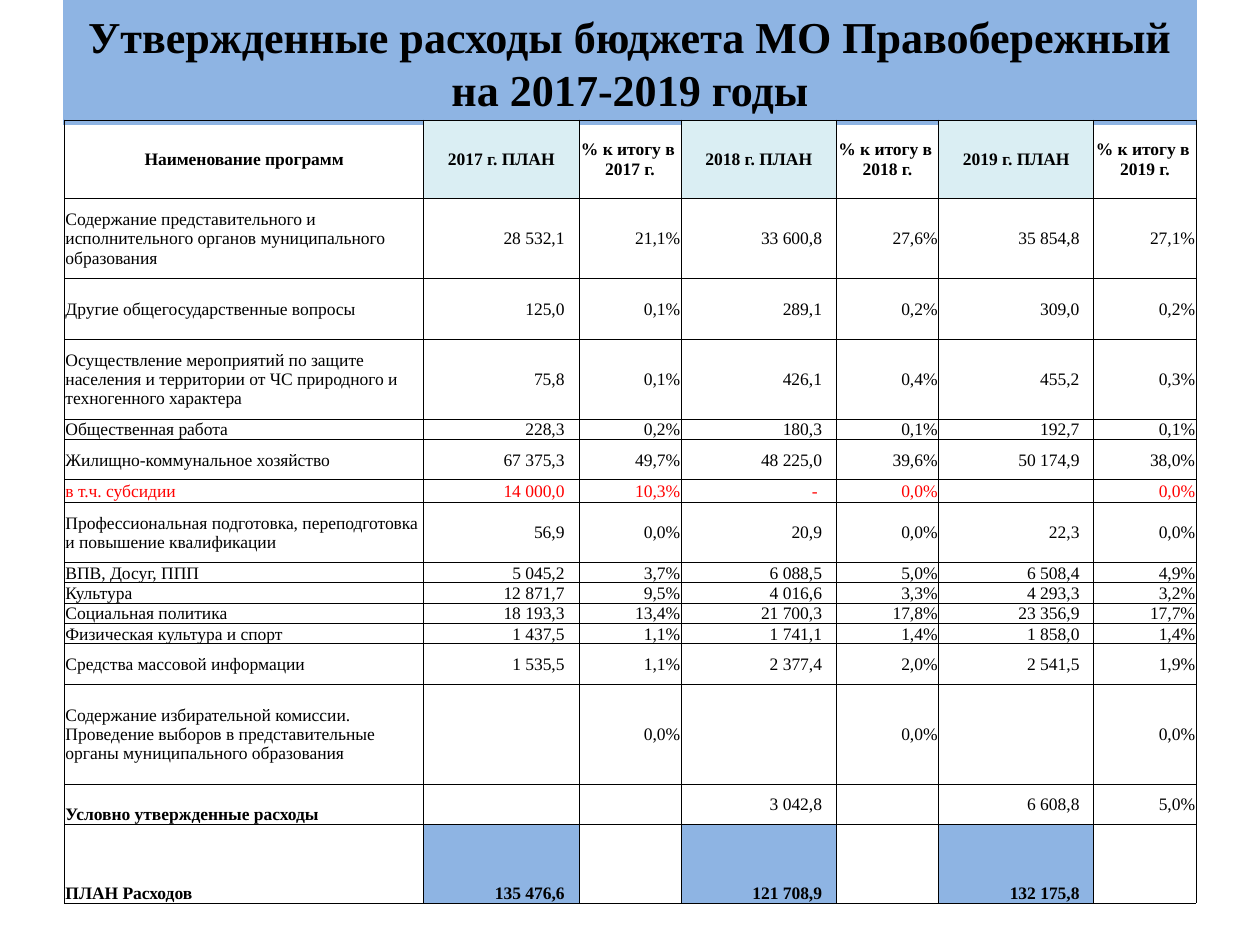
from lxml.etree import SubElement
from pptx import Presentation
from pptx.dml.color import RGBColor
from pptx.enum.text import MSO_ANCHOR as Anchor, MSO_AUTO_SIZE as AutoSize, PP_ALIGN as Align
from pptx.oxml.ns import qn
from pptx.util import Cm, Pt

COLORS = {"black": "000000", "red": "FF0000", "band": "8EB4E3", "plan": "DAEEF3"}
FONT = "Times New Roman"
COLUMN_WIDTHS = [7.24] + [3.13, 2.06] * 3
ROW_UNIT = 0.405  # height of a one-line row

# Row height in units, then the cells
ROWS = [
    (3.9, "Наименование программ", "2017 г. ПЛАН", "% к итогу в  2017 г.",
     "2018 г. ПЛАН", "% к итогу в  2018 г.", "2019 г. ПЛАН", "% к итогу в  2019 г."),
    (4, "Содержание представительного и исполнительного органов муниципального образования",
     "28 532,1", "21,1%", "33 600,8", "27,6%", "35 854,8", "27,1%"),
    (3, "Другие общегосударственные вопросы",
     "125,0", "0,1%", "289,1", "0,2%", "309,0", "0,2%"),
    (4, "Осуществление мероприятий по защите населения и территории от ЧС природного "
        "и техногенного характера",
     "75,8", "0,1%", "426,1", "0,4%", "455,2", "0,3%"),
    (1, "Общественная работа", "228,3", "0,2%", "180,3", "0,1%", "192,7", "0,1%"),
    (2, "Жилищно-коммунальное хозяйство",
     "67 375,3", "49,7%", "48 225,0", "39,6%", "50 174,9", "38,0%"),
    (1, "в т.ч. субсидии", "14 000,0", "10,3%", "-", "0,0%", "", "0,0%"),
    (3, "Профессиональная подготовка, переподготовка и повышение квалификации",
     "56,9", "0,0%", "20,9", "0,0%", "22,3", "0,0%"),
    (1, "ВПВ, Досуг, ППП", "5 045,2", "3,7%", "6 088,5", "5,0%", "6 508,4", "4,9%"),
    (1, "Культура", "12 871,7", "9,5%", "4 016,6", "3,3%", "4 293,3", "3,2%"),
    (1, "Социальная политика",
     "18 193,3", "13,4%", "21 700,3", "17,8%", "23 356,9", "17,7%"),
    (1, "Физическая культура и спорт",
     "1 437,5", "1,1%", "1 741,1", "1,4%", "1 858,0", "1,4%"),
    (2, "Средства массовой информации",
     "1 535,5", "1,1%", "2 377,4", "2,0%", "2 541,5", "1,9%"),
    (5, "Содержание избирательной комиссии. Проведение выборов в представительные "
        "органы муниципального образования",
     "", "0,0%", "", "0,0%", "", "0,0%"),
    (2, "Условно утвержденные расходы", "", "", "3 042,8", "", "6 608,8", "5,0%"),
    (3.9, "ПЛАН Расходов", "135 476,6", "", "121 708,9", "", "132 175,8", ""),
]
HEADER, SUBSIDIES, RESERVED, TOTAL = 0, 6, 14, 15


def set_font(font, size, color="black", bold=False):
    font.name = FONT
    font.size = Pt(size)
    font.bold = bold
    font.color.rgb = RGBColor.from_string(COLORS[color])


def add_borders(cell):
    properties = cell._tc.get_or_add_tcPr()
    for side in ("lnL", "lnR", "lnT", "lnB"):
        line = SubElement(properties, qn(f"a:{side}"), w=str(Pt(0.5)))
        fill = SubElement(line, qn("a:solidFill"))
        SubElement(fill, qn("a:srgbClr"), val=COLORS["black"])


presentation = Presentation()
presentation.slide_width, presentation.slide_height = Cm(25.4), Cm(19.05)
slide = presentation.slides.add_slide(presentation.slide_layouts[5])

title = slide.shapes.title
title.left, title.top, title.width, title.height = Cm(1.27), Cm(0), Cm(22.86), Cm(2.52)
title.fill.solid()
title.fill.fore_color.rgb = RGBColor.from_string(COLORS["band"])
title_frame = title.text_frame
title_frame.text = "Утвержденные расходы бюджета МО Правобережный на 2017-2019 годы"
title_frame.auto_size = AutoSize.NONE
title_frame.word_wrap = True
title_frame.vertical_anchor = Anchor.MIDDLE
title_frame.paragraphs[0].alignment = Align.CENTER
set_font(title_frame.paragraphs[0].font, 25.2, bold=True)

table_height = Cm(ROW_UNIT * sum(row[0] for row in ROWS))
table = slide.shapes.add_table(
    len(ROWS), len(COLUMN_WIDTHS), Cm(1.3), Cm(2.42), Cm(sum(COLUMN_WIDTHS)), table_height
).table
table.first_row = table.horz_banding = False
for column, width in zip(table.columns, COLUMN_WIDTHS):
    column.width = Cm(width)

for row_index, (units, *texts) in enumerate(ROWS):
    table.rows[row_index].height = Cm(ROW_UNIT * units)
    for column_index, text in enumerate(texts):
        is_name = column_index == 0
        is_amount = column_index % 2 == 1
        cell = table.cell(row_index, column_index)
        cell.margin_left = cell.margin_right = cell.margin_top = Cm(0.02)
        cell.margin_bottom = 0
        if is_amount and row_index != HEADER:
            cell.margin_right = Cm(0.38 if text == "-" else 0.29)
        at_bottom = row_index == TOTAL or (row_index == RESERVED and is_name)
        cell.vertical_anchor = Anchor.BOTTOM if at_bottom else Anchor.MIDDLE

        add_borders(cell)
        if is_amount and row_index in (HEADER, TOTAL):
            cell.fill.solid()
            fill_name = "plan" if row_index == HEADER else "band"
            cell.fill.fore_color.rgb = RGBColor.from_string(COLORS[fill_name])
        else:
            cell.fill.background()

        cell.text = text
        paragraph = cell.text_frame.paragraphs[0]
        if not text:
            SubElement(paragraph._p, qn("a:endParaRPr"), sz="1000")
            continue
        if row_index == HEADER:
            paragraph.alignment = Align.CENTER
        else:
            paragraph.alignment = Align.LEFT if is_name else Align.RIGHT
        set_font(paragraph.font, 10, "red" if row_index == SUBSIDIES else "black",
                 bold=row_index == HEADER or at_bottom)

presentation.save("out.pptx")
